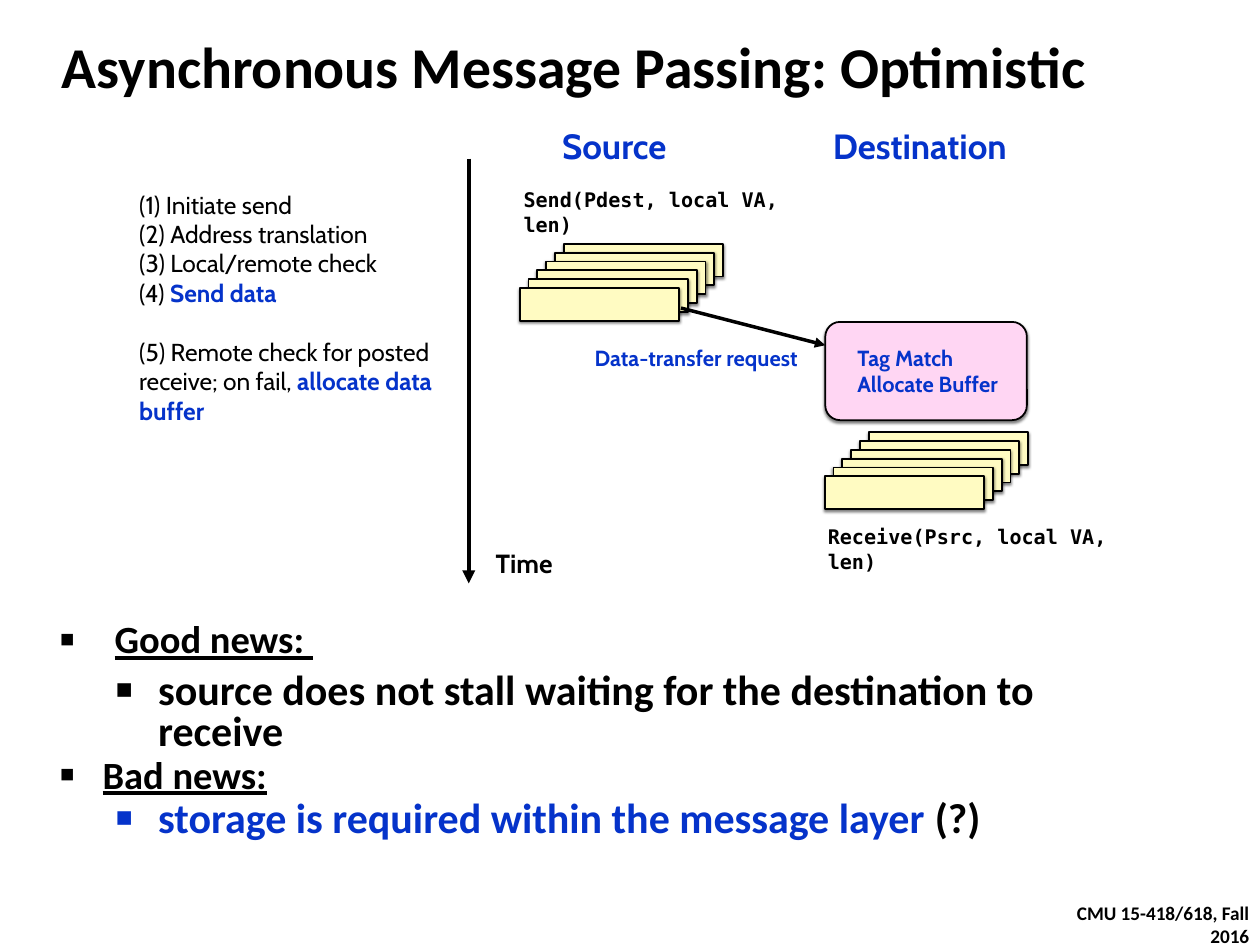
"""Build the slide on optimistic asynchronous message passing."""
import pptx
import pptx.dml.color
import pptx.enum.shapes
import pptx.enum.text
import pptx.oxml
import pptx.oxml.ns
import pptx.util

Inches = pptx.util.Inches
Pt = pptx.util.Pt
RGBColor = pptx.dml.color.RGBColor
ALIGN = pptx.enum.text.PP_ALIGN
ANCHOR = pptx.enum.text.MSO_ANCHOR
SHAPE = pptx.enum.shapes.MSO_SHAPE
BLACK = RGBColor(0x00, 0x00, 0x00)
BLUE = RGBColor(0x05, 0x33, 0xCA)
PINK = RGBColor(0xFF, 0xD6, 0xF3)
CREAM = RGBColor(0xFF, 0xFB, 0xC2)
SANS, ROUND, MONO = "Calibri", "Cabin", "DejaVu Sans Mono"
STEPS = ("(1) Initiate send\n(2) Address translation\n(3) Local/remote check\n"
         "(4) \n(5) Remote check for posted receive; on fail, ")
NEWS = [
    ("Good news: ", 0, 0.88, 6, BLACK),
    ("source does not stall waiting for the destination to receive", 1, 1.57, 14, BLACK),
    ("Bad news:", 0, 0.69, 6, BLACK),
    ("storage is required within the message layer", 1, 1.57, 6, BLUE),
]


def add_xml(parent, tag, **attrs):
    child = pptx.oxml.parse_xml(f"<a:{tag} {pptx.oxml.ns.nsdecls('a')}/>")
    for name, value in attrs.items():
        child.set(name, str(value))
    parent.append(child)
    return child


def style(run, face, size, color, bold=True):
    font = run.font
    font.name, font.size, font.bold = face, Pt(size), bold
    font.color.rgb = color


def place(shape, left, top, width, height):
    shape.left, shape.top = Inches(left), Inches(top)
    shape.width, shape.height = Inches(width), Inches(height)


def set_frame(frame, anchor):
    frame.word_wrap = True
    frame.auto_size = pptx.enum.text.MSO_AUTO_SIZE.NONE
    frame.vertical_anchor = anchor
    frame.margin_left = frame.margin_right = Inches(0.06)
    frame.margin_top = frame.margin_bottom = Inches(0.06)


def add_label(slide, text, spot, face, size, color=BLACK, bold=True,
              align=ALIGN.LEFT, anchor=ANCHOR.MIDDLE):
    frame = slide.shapes.add_textbox(*map(Inches, spot)).text_frame
    set_frame(frame, anchor)
    frame.text = text
    for par in frame.paragraphs:
        par.alignment = align
        for run in par.runs:
            style(run, face, size, color, bold)
    return frame


def add_run(par, text, face, size, color):
    run = par.add_run()
    run.text = text
    style(run, face, size, color)


def add_block(shapes, kind, spot, color):
    block = shapes.add_shape(kind, *map(Inches, spot))
    block.fill.solid()
    block.fill.fore_color.rgb = color
    block.line.color.rgb = BLACK
    block.line.width = Pt(2)
    block.shadow.inherit = False
    effects = block._element.spPr.find(pptx.oxml.ns.qn("a:effectLst"))
    shade = add_xml(effects, "outerShdw", blurRad=Pt(3), dist=Pt(2),
                    dir=5400000, rotWithShape=0)
    add_xml(add_xml(shade, "srgbClr", val=BLACK), "alpha", val=50000)
    return block


def add_stack(slide, left, top, count=6, step=0.14):
    group = slide.shapes.add_group_shape()
    for depth in reversed(range(count)):
        shift = depth * step
        add_block(group.shapes, SHAPE.RECTANGLE,
                  (left + shift, top - shift, 2.53, 0.52), CREAM)


def add_arrow(slide, ends, width):
    arrow = slide.shapes.add_connector(
        pptx.enum.shapes.MSO_CONNECTOR.STRAIGHT, *map(Inches, ends))
    arrow.line.color.rgb = BLACK
    arrow.line.width = Pt(width)
    props = arrow._element.spPr
    add_xml(props.find(pptx.oxml.ns.qn("a:ln")), "tailEnd", type="triangle")
    add_xml(props, "effectLst")


def set_title(shape):
    place(shape, 0.92, 0.43, 17.67, 1.22)
    frame = shape.text_frame
    set_frame(frame, ANCHOR.TOP)
    frame.text = "Asynchronous Message Passing: Optimistic"
    frame.paragraphs[0].alignment = ALIGN.LEFT
    style(frame.paragraphs[0].runs[0], SANS, 66, BLACK)


def set_news(shape):
    place(shape, 0.88, 9.85, 17.67, 4.57)
    frame = shape.text_frame
    set_frame(frame, ANCHOR.TOP)
    frame.text = "\n".join(item[0] for item in NEWS)
    for par, (_, level, margin, before, color) in zip(frame.paragraphs, NEWS):
        par.level = level
        par.line_spacing = 0.8
        par.space_before = Pt(before)
        style(par.runs[0], SANS, 48 if level else 44, color)
        par.runs[0].font.underline = level == 0
        hang = 0.69 if level else margin
        props = par._p.get_or_add_pPr()
        props.set("marL", str(Inches(margin)))
        props.set("indent", str(-Inches(hang)))
        add_xml(props, "buSzPct", val=130000 if level else 120000)
        add_xml(props, "buChar", char="▪")
    add_run(frame.paragraphs[-1], " (?)", SANS, 48, BLACK)


def add_steps(slide):
    frame = add_label(slide, STEPS, (2.15, 2.95, 5.21, 4.76), ROUND, 28,
                      bold=False, anchor=ANCHOR.TOP)
    send, check = frame.paragraphs[3:]
    add_run(send, "Send data", ROUND, 28, BLUE)
    add_run(check, "allocate data buffer", ROUND, 28, BLUE)
    check.space_before = Pt(34)


def main():
    deck = pptx.Presentation()
    deck.slide_width, deck.slide_height = Inches(20), Inches(15)
    slide = deck.slides.add_slide(deck.slide_layouts[1])
    set_title(slide.shapes.title)
    set_news(slide.placeholders[1])
    add_label(slide, "CMU 15-418/618, Fall 2016", (16.51, 14.45, 3.38, 0.43),
              SANS, 22, align=ALIGN.RIGHT)
    match = add_block(slide.shapes, SHAPE.ROUNDED_RECTANGLE,
                      (13.1, 5.11, 3.2, 1.56), PINK)
    match.adjustments[0] = 0.15
    add_label(slide, "Tag Match\nAllocate Buffer", (13.55, 5.45, 2.41, 0.88),
              ROUND, 25, BLUE)
    add_label(slide, "Source", (8.84, 1.97, 1.82, 0.67), ROUND, 40, BLUE,
              align=ALIGN.CENTER)
    add_label(slide, "Destination", (13.09, 1.97, 3.02, 0.67), ROUND, 40, BLUE,
              align=ALIGN.CENTER)
    add_label(slide, "Send(Pdest, local VA, len)", (8.25, 3.15, 4.69, 0.43), MONO, 23)
    add_arrow(slide, (7.44, 2.52, 7.44, 9.26), 5)
    add_label(slide, "Time", (7.8, 8.67, 1.04, 0.54), ROUND, 30, align=ALIGN.CENTER)
    add_steps(slide)
    add_label(slide, "Receive(Psrc, local VA, len)", (13.08, 8.5, 5.04, 0.43), MONO, 23)
    add_stack(slide, 8.25, 4.57)
    add_stack(slide, 13.09, 7.56)
    add_arrow(slide, (10.81, 4.89, 13.1, 5.48), 4)
    add_label(slide, "Data-transfer request", (9.38, 5.39, 3.65, 0.58), ROUND, 25, BLUE)
    deck.save("out.pptx")


if __name__ == "__main__":
    main()
